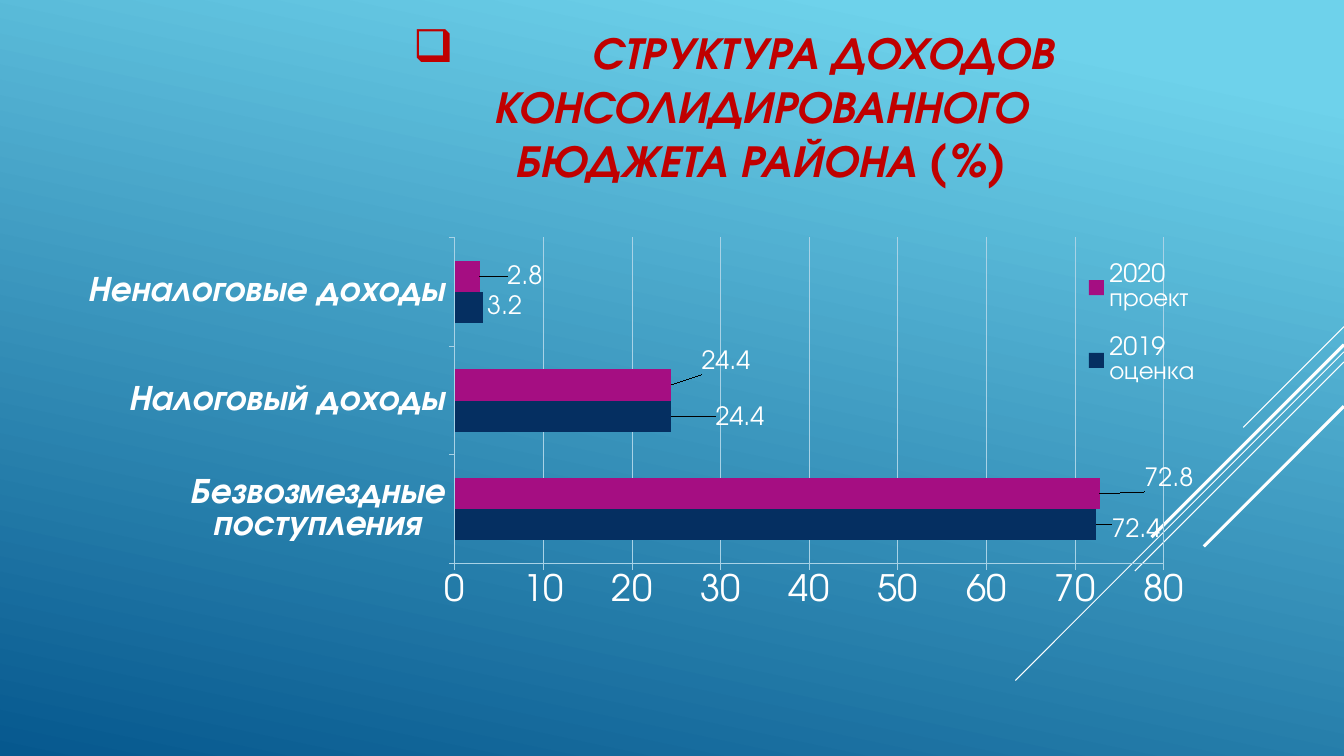
from dataclasses import dataclass

from pptx import Presentation
from pptx.chart.data import CategoryChartData
from pptx.dml.color import RGBColor
from pptx.enum.chart import (XL_CHART_TYPE, XL_LABEL_POSITION,
                             XL_LEGEND_POSITION, XL_TICK_MARK)
from pptx.enum.shapes import MSO_CONNECTOR
from pptx.enum.text import MSO_ANCHOR, PP_ALIGN
from pptx.oxml.ns import qn
from pptx.util import Pt
from lxml.etree import SubElement

FONT = "TeX Gyre Adventor"
WHITE = RGBColor(0xFF, 0xFF, 0xFF)
GRID = RGBColor(0xA8, 0xD2, 0xE6)
RED = RGBColor(0xC0, 0x00, 0x00)
NAVY = RGBColor(0x05, 0x2F, 0x61)
MAGENTA = RGBColor(0xA5, 0x0E, 0x82)
SKY = RGBColor(0x6E, 0xD2, 0xEB)
DEEP_BLUE = RGBColor(0x06, 0x58, 0x8E)

SLIDE_W, SLIDE_H = 960, 540
CHART_X, CHART_Y, CHART_W, CHART_H = 32.4, 155.5, 828.7, 303.8


@dataclass
class Diagonal:
    """A 45-degree line running down and left from the right edge."""
    top: float
    run: float
    width: float


@dataclass
class TitlePart:
    lines: list[str]
    margin: float
    indent: float = 0
    bullet: str = ""


@dataclass
class BarSeries:
    name: str
    values: list[float]
    color: RGBColor
    label_shifts: dict[int, tuple[float, float]]


DIAGONALS = [
    Diagonal(233.3, 72, 0.75),
    Diagonal(251.3, 234.7, 0.75),
    Diagonal(258.5, 149.4, 0.75),
    Diagonal(246.2, 137.5, 2.25),
    Diagonal(290.2, 100.1, 2.25),
]
TITLE = [
    TitlePart(["СТРУКТУРА ДОХОДОВ"], 130, -127, "❑"),
    TitlePart(["КОНСОЛИДИРОВАННОГО", "БЮДЖЕТА РАЙОНА (%)"], 42),
]
CATEGORIES = ["Безвозмездные поступления", "Налоговый доходы", "Неналоговые доходы"]
SERIES = [
    BarSeries("2019 оценка", [72.4, 24.4, 3.2], NAVY,
              {0: (8, 4), 1: (29, 2)}),
    BarSeries("2020 проект", [72.8, 24.4, 2.8], MAGENTA,
              {0: (29, -10), 1: (19, -16), 2: (17, 1)}),
]


def add_diagonal(s, d: Diagonal) -> None:
    line = s.shapes.add_connector(MSO_CONNECTOR.STRAIGHT, Pt(SLIDE_W), Pt(d.top),
                                  Pt(SLIDE_W - d.run), Pt(d.top + d.run))
    line.line.color.rgb = WHITE
    line.line.width = Pt(d.width)
    SubElement(line._element.spPr, qn("a:effectLst"))


def add_title(s, parts: list[TitlePart]) -> None:
    tf = s.shapes.add_textbox(Pt(180.7), Pt(11.5), Pt(683.3), Pt(128.2)).text_frame
    tf.word_wrap = True
    tf.vertical_anchor = MSO_ANCHOR.MIDDLE
    for i, part in enumerate(parts):
        p = tf.add_paragraph() if i else tf.paragraphs[0]
        p.alignment = PP_ALIGN.CENTER
        p.line_spacing = Pt(38.5)
        props = p._p.get_or_add_pPr()
        props.set("marL", str(Pt(part.margin)))
        props.set("indent", str(Pt(part.indent)))
        if part.bullet:
            SubElement(props, qn("a:buChar")).set("char", part.bullet)
        for j, text in enumerate(part.lines):
            if j:
                p.add_line_break()
            r = p.add_run()
            r.text = text
            set_font(r.font, 32.4, RED, bold=True, italic=True)


def set_font(font, size: float, color: RGBColor = WHITE,
             bold: bool = False, italic: bool = False) -> None:
    font.name = FONT
    font.size = Pt(size)
    font.bold = bold
    font.italic = italic
    font.color.rgb = color


def make_layout(parent, position: int, **values) -> None:
    """Put a manual layout into a chart part, as fractions of the chart."""
    for old in parent.findall(qn("c:layout")):
        parent.remove(old)
    layout = SubElement(parent, qn("c:layout"))
    manual = SubElement(layout, qn("c:manualLayout"))
    for tag, value in values.items():
        SubElement(manual, qn(f"c:{tag}")).set("val", str(value))
    parent.insert(position, layout)


def style_axis(axis, size: float, bold: bool = False) -> None:
    axis.major_tick_mark = XL_TICK_MARK.OUTSIDE
    axis.minor_tick_mark = XL_TICK_MARK.NONE
    axis.format.line.color.rgb = GRID
    axis.format.line.width = Pt(0.75)
    set_font(axis.tick_labels.font, size, bold=bold, italic=bold)


def style_series(ser, data: BarSeries) -> None:
    ser.format.fill.solid()
    ser.format.fill.fore_color.rgb = data.color
    ser.invert_if_negative = False
    labels = ser.data_labels
    labels.show_value = True
    labels.position = XL_LABEL_POSITION.OUTSIDE_END
    set_font(labels.font, 18)
    for idx in data.label_shifts:
        label = ser.points[idx].data_label
        set_font(label.font, 18)
        label.position = XL_LABEL_POSITION.OUTSIDE_END
    for el in ser._element.iter(qn("c:dLbl")):
        dx, dy = data.label_shifts[int(el.find(qn("c:idx")).get("val"))]
        make_layout(el, 1, x=round(dx / CHART_W, 4), y=round(dy / CHART_H, 4))


def add_income_chart(s) -> None:
    data = CategoryChartData()
    data.categories = CATEGORIES
    for series in SERIES:
        data.add_series(series.name, series.values)
    chart = s.shapes.add_chart(XL_CHART_TYPE.BAR_CLUSTERED, Pt(CHART_X), Pt(CHART_Y),
                               Pt(CHART_W), Pt(CHART_H), data).chart
    set_font(chart.font, 18)
    chart.has_title = False

    # Bars and their labels
    plot = chart.plots[0]
    plot.gap_width = 150
    plot.overlap = 0
    plot.vary_by_categories = False
    for ser, series in zip(plot.series, SERIES):
        style_series(ser, series)

    # Axes
    style_axis(chart.category_axis, 25.4, bold=True)
    values = chart.value_axis
    style_axis(values, 26)
    values.minimum_scale, values.maximum_scale, values.major_unit = 0, 80, 10
    values.has_major_gridlines = True
    values.major_gridlines.format.line.color.rgb = GRID
    values.major_gridlines.format.line.width = Pt(0.75)

    # Legend and plot area placement
    chart.has_legend = True
    chart.legend.position = XL_LEGEND_POSITION.RIGHT
    chart.legend.include_in_layout = False
    set_font(chart.legend.font, 18)
    make_layout(chart.legend._element, 1, xMode="edge", yMode="edge",
                x=0.89, y=0.05, w=0.11, h=0.4)
    make_layout(next(chart.element.iter(qn("c:plotArea"))), 0, layoutTarget="inner",
                xMode="edge", yMode="edge", x=0.353, y=0.046, w=0.611, h=0.768)


def main() -> None:
    prs = Presentation()
    prs.slide_width, prs.slide_height = Pt(SLIDE_W), Pt(SLIDE_H)
    s = prs.slides.add_slide(prs.slide_layouts[6])

    # Background
    fill = s.background.fill
    fill.gradient()
    fill.gradient_angle = 258
    for stop, color, position in zip(fill.gradient_stops, (SKY, DEEP_BLUE), (0.1, 1)):
        stop.color.rgb = color
        stop.position = position

    # Decoration, title and chart
    for d in DIAGONALS:
        add_diagonal(s, d)
    add_title(s, TITLE)
    add_income_chart(s)
    prs.save("out.pptx")


if __name__ == "__main__":
    main()
